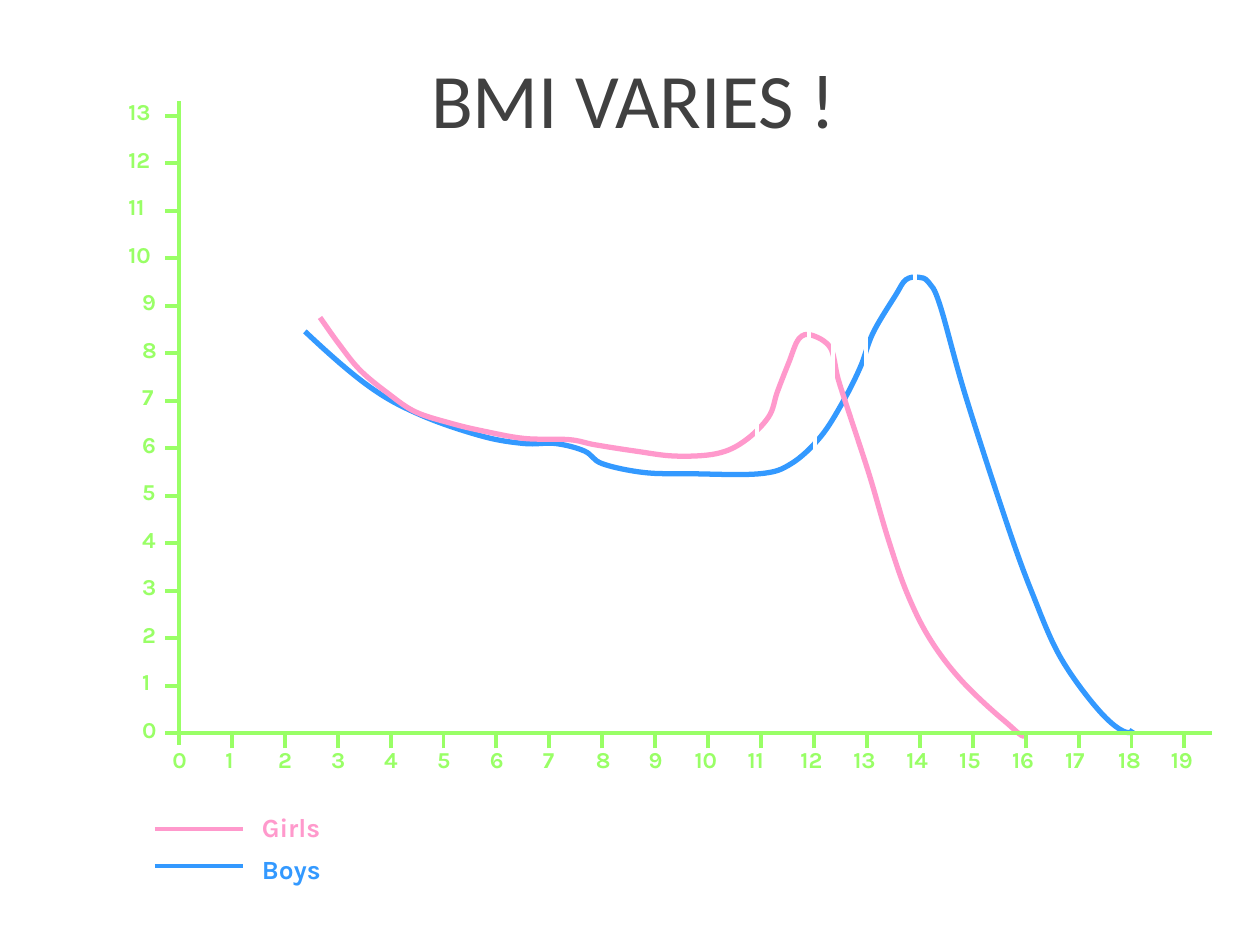
from lxml import etree
from pptx import Presentation
from pptx.dml.color import RGBColor as RGB
from pptx.enum.shapes import MSO_CONNECTOR as Link
from pptx.enum.text import MSO_ANCHOR as Anchor, MSO_AUTO_SIZE as Fit, PP_ALIGN as Align
from pptx.oxml.ns import qn
from pptx.util import Inches, Pt

GREEN, PINK, BLUE, WHITE, GREY = "99FF66", "FF99CC", "3399FF", "FFFFFF", "404040"

# Chart frame, in grid units (100 columns by 75 rows)
LEFT, BASE = 14.2, 58.2
COL, ROW = 4.2, 3.77
AGES, LEVELS = 20, 14

# Curve knots; the first and last only steer the slope at the ends
BOYS = [(19, 21), (24.2, 26.3), (29.2, 30.6), (33.3, 32.9), (38.2, 34.6),
        (41.6, 35.2), (44.1, 35.2), (46.4, 35.8), (47.8, 36.8), (51.1, 37.5),
        (54.8, 37.6), (60.3, 37.6), (62.8, 36.8), (65.1, 34.7), (66.9, 31.9),
        (68.3, 29.1), (69.3, 26.4), (71.1, 23.4), (71.9, 22.2), (72.9, 22),
        (73.7, 22.4), (74.6, 24.2), (76.6, 31.3), (79.8, 41.2), (81.9, 47),
        (84.3, 52.4), (87.8, 57), (89.9, 57.9), (89, 53.4)]
GIRLS = [(23.9, 23.1), (25.4, 25.2), (26.9, 27.3), (28.6, 29.4), (30.9, 31.3),
         (33, 32.7), (35.8, 33.6), (38.3, 34.2), (41.6, 34.8), (45.2, 34.9),
         (47.2, 35.3), (50.4, 35.8), (53.6, 36.2), (56.9, 36), (59.1, 35),
         (61, 33.1), (61.7, 31.1), (62.6, 28.8), (63.4, 26.9), (64.4, 26.6),
         (65.9, 27.6), (66.5, 30), (67.3, 32.5), (69, 37.7), (70.5, 42.8),
         (72, 47.1), (73.8, 50.7), (76.3, 54), (79.7, 57.2), (81.4, 58.2),
         (79.7, 53)]
GAPS = [(60.1, 32.2), (64.2, 25), (64.7, 33.3), (66.1, 26.9), (68.7, 25.9), (72.6, 20.1)]


def rgb(code):
    return RGB.from_string(code)


class Deck:
    def __init__(self):
        self.prs = Presentation()
        self.prs.slide_width, self.prs.slide_height = Inches(10), Inches(7.5)
        self.unit = self.prs.slide_width / 100
        self.slide = self.prs.slides.add_slide(self.prs.slide_layouts[5])
        self.shapes = self.slide.shapes

    def size(self, *cells):
        return [round(cell * self.unit) for cell in cells]

    def add_text(self, para, text, font, size, color, bold=False):
        run = para.add_run()
        run.text = text
        run.font.name, run.font.size, run.font.bold = font, Pt(size), bold
        run.font.color.rgb = rgb(color)

    def title(self, text, x, y, w, h):
        box = self.shapes.title
        box.left, box.top, box.width, box.height = self.size(x, y, w, h)
        frame = box.text_frame
        frame.word_wrap, frame.auto_size = True, Fit.NONE
        frame.vertical_anchor = Anchor.TOP
        para = frame.paragraphs[0]
        para.alignment = Align.CENTER
        self.add_text(para, text, "Calibri", 44, GREY)

    def label(self, text, x, y, w, h, size, color):
        frame = self.shapes.add_textbox(*self.size(x, y, w, h)).text_frame
        frame.word_wrap, frame.auto_size = False, Fit.SHAPE_TO_FIT_TEXT
        self.add_text(frame.paragraphs[0], text, "Karla", size, color, True)

    def line(self, x1, y1, x2, y2, color):
        link = self.shapes.add_connector(Link.STRAIGHT, *self.size(x1, y1, x2, y2))
        link.line.color.rgb, link.line.width = rgb(color), Pt(2.25)
        etree.SubElement(link._element.spPr, qn("a:effectLst"))

    def curve(self, knots, color):
        # Each control point follows the direction between neighbouring knots
        points = []
        for prev, start, end, after in zip(knots, knots[1:], knots[2:], knots[3:]):
            points.append([s + (e - p) / 6 for p, s, e in zip(prev, start, end)])
            points.append([e - (a - s) / 6 for s, e, a in zip(start, end, after)])
            points.append(end)
        pen = self.shapes.build_freeform(*self.size(*knots[1]))
        pen.add_line_segments([self.size(*p) for p in points], close=False)
        shape = pen.convert_to_shape()
        shape.shadow.inherit = False
        shape.fill.background()
        shape.line.color.rgb, shape.line.width = rgb(color), Pt(3)
        # Join every three straight steps into one Bézier step
        steps = list(shape._element.iter(qn("a:lnTo")))
        for i in range(0, len(steps), 3):
            bend = etree.Element(qn("a:cubicBezTo"))
            steps[i].addprevious(bend)
            for step in steps[i:i + 3]:
                bend.append(step[0])
                step.getparent().remove(step)


def main():
    deck = Deck()
    deck.title("BMI VARIES !", 2.8, 3.6, 95, 15)

    # Growth curves with white breaks
    deck.curve(BOYS, BLUE)
    deck.curve(GIRLS, PINK)
    for x, y in GAPS:
        deck.line(x, y, x, y + 3.5, WHITE)

    # Axes
    deck.line(LEFT - 1.1, BASE, 96.2, BASE, GREEN)
    deck.line(LEFT, BASE + 0.9, LEFT, 8, GREEN)

    # Ticks and numbers
    for age in range(AGES):
        x, w = LEFT + age * COL, 3.2 if age < 10 else 4.3
        if age:
            deck.line(x, BASE + 1.2, x, BASE + 0.1, GREEN)
        deck.label(str(age), x + 0.1 - w / 2, 58.7, w, 3.2, 13, GREEN)
    for level in range(LEVELS):
        y, w = BASE - level * ROW, 3.2 if level < 10 else 4.3
        if level:
            deck.line(LEFT - 1.1, y, LEFT, y, GREEN)
        deck.label(str(level), 13.5 - w, y - 1.9, w, 3.2, 13, GREEN)

    # Legend
    for name, color, y, top in (("Girls", PINK, 65.8, 63.9), ("Boys", BLUE, 68.7, 67.2)):
        deck.line(12.3, y, 19.3, y, color)
        deck.label(name, 19.8, top, 7, 3.5, 15, color)

    deck.prs.save("out.pptx")


if __name__ == "__main__":
    main()
